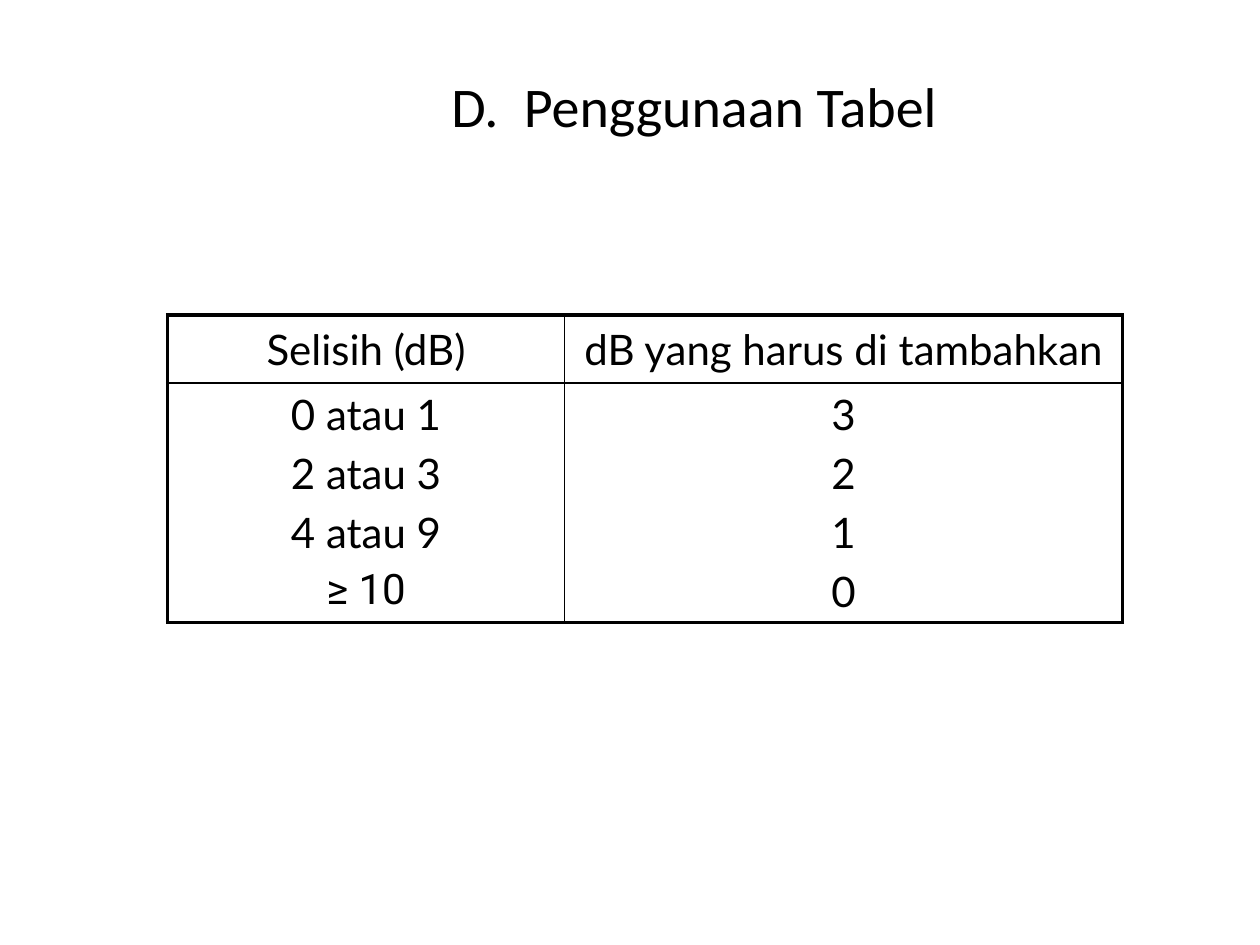
from lxml.etree import SubElement
from pptx import Presentation
from pptx.dml.color import RGBColor
from pptx.enum.text import MSO_ANCHOR, PP_ALIGN
from pptx.oxml.ns import qn
from pptx.util import Inches, Pt

COLORS = {"ink": "000000", "paper": "FFFFFF"}
OUTER, INNER = 2.25, 1
HEADINGS = ["Selisih (dB)", "dB yang harus di tambahkan"]
DIFFERENCES = ["0 atau 1", "2 atau 3", "4 atau 9", "≥ 10"]
ADDITIONS = ["3", "2", "1", "0"]


class SlideBuilder:
    """Holds the style and the current slide."""

    def __init__(self, deck):
        self.slide = deck.slides.add_slide(deck.slide_layouts[5])
        self.slide.background.fill.solid()
        self.slide.background.fill.fore_color.rgb = RGBColor.from_string(COLORS["paper"])

    def format_paragraph(self, paragraph, font, size):
        paragraph.alignment = PP_ALIGN.CENTER
        for run in paragraph.runs:
            run.font.name = font
            run.font.size = Pt(size)
            run.font.color.rgb = RGBColor.from_string(COLORS["ink"])

    def title(self, text, left, top, width, height):
        heading = self.slide.shapes.title
        heading.left, heading.top = Inches(left), Inches(top)
        heading.width, heading.height = Inches(width), Inches(height)
        heading.text_frame.text = text
        heading.text_frame.vertical_anchor = MSO_ANCHOR.MIDDLE
        self.format_paragraph(heading.text_frame.paragraphs[0], "Calibri", 32)

    def border(self, cell, side, weight):
        line = SubElement(cell._tc.get_or_add_tcPr(), qn(f"a:ln{side}"), w=str(Pt(weight)))
        fill = SubElement(line, qn("a:solidFill"))
        SubElement(fill, qn("a:srgbClr"), val=COLORS["ink"])

    def cell(self, cell, text, weights, anchor):
        cell.text_frame.text = text
        cell.vertical_anchor = anchor
        for paragraph in cell.text_frame.paragraphs:
            paragraph.space_before = Pt(4.8)
            self.format_paragraph(paragraph, "Roboto" if "≥" in paragraph.text else "Lato", 24)
        for side, weight in zip("LRTB", weights):
            self.border(cell, side, weight)
        cell.fill.background()

    def table(self, contents, left, top, widths, heights):
        frame = self.slide.shapes.add_table(
            len(heights), len(widths), Inches(left), Inches(top),
            Inches(sum(widths)), Inches(sum(heights)))
        grid = frame.table
        grid.first_row = grid.horz_banding = False
        for column, width in zip(grid.columns, widths):
            column.width = Inches(width)
        for row, height in zip(grid.rows, heights):
            row.height = Inches(height)
        last_row, last_column = len(heights) - 1, len(widths) - 1
        for r, texts in enumerate(contents):
            anchor = MSO_ANCHOR.TOP if r else MSO_ANCHOR.MIDDLE
            for c, text in enumerate(texts):
                edges = (c == 0, c == last_column, r == 0, r == last_row)
                weights = [OUTER if edge else INNER for edge in edges]
                self.cell(grid.cell(r, c), text, weights, anchor)


def main():
    deck = Presentation()
    deck.slide_width, deck.slide_height = Inches(10), Inches(7.5)
    builder = SlideBuilder(deck)
    builder.title("D.  Penggunaan Tabel", 1.25, 0.5, 8.52, 0.67)
    values = ["\n".join(lines) for lines in (DIFFERENCES, ADDITIONS)]
    builder.table([HEADINGS, values], 1.33, 2.5, [3.15, 4.43], [0.54, 1.9])
    deck.save("out.pptx")


if __name__ == "__main__":
    main()
